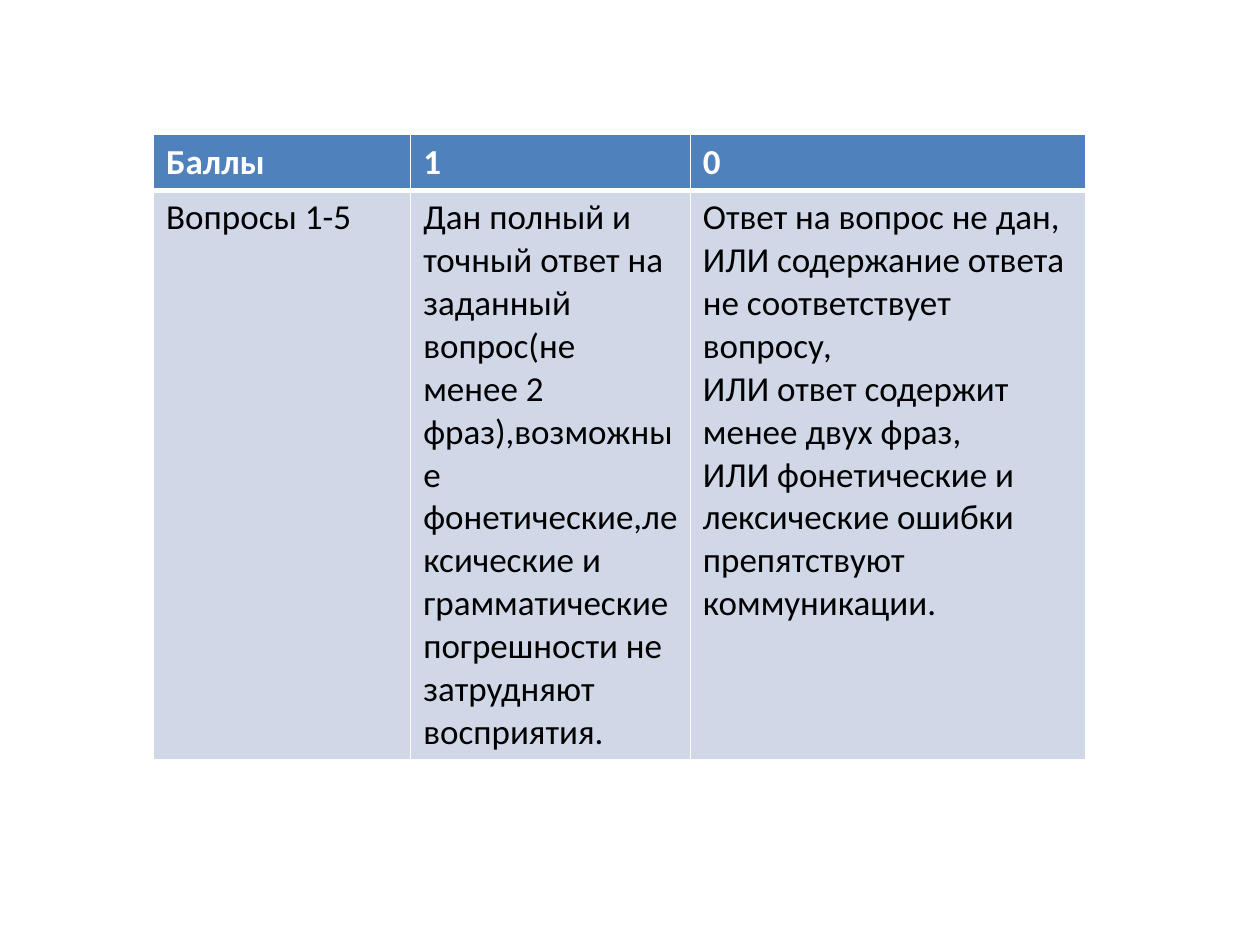
from lxml import etree
from pptx import Presentation
from pptx.dml.color import RGBColor
from pptx.oxml import ns
from pptx.util import Pt

WHITE = RGBColor(0xFF, 0xFF, 0xFF)
BLACK = RGBColor(0, 0, 0)
HEADER_BLUE = RGBColor(0x4F, 0x81, 0xBD)
BODY_BLUE = RGBColor(0xD0, 0xD8, 0xE8)

COLUMN_WIDTHS = (146.9, 159.8, 226.1)
ROW_HEIGHT = 29.5
HEADER = [["Баллы"], ["1"], ["0"]]
CRITERIA = [
    ["Вопросы 1-5"],
    ["Дан полный и точный ответ на заданный вопрос(не менее 2 фраз),возможные "
     "фонетические,лексические и грамматические погрешности не затрудняют восприятия."],
    ["Ответ на вопрос не дан,",
     "ИЛИ содержание ответа не соответствует вопросу,",
     "ИЛИ ответ содержит менее двух фраз,",
     "ИЛИ фонетические и лексические ошибки препятствуют коммуникации."],
]


def set_borders(cell, widths, color):
    """Draw the left, right, top and bottom borders of a cell, in points."""
    properties = cell._tc.get_or_add_tcPr()
    for position, (side, width) in enumerate(zip("LRTB", widths)):
        line = etree.Element(ns.qn(f"a:ln{side}"), w=str(Pt(width)))
        fill = etree.SubElement(line, ns.qn("a:solidFill"))
        etree.SubElement(fill, ns.qn("a:srgbClr"), val=str(color))
        properties.insert(position, line)


def fill_cell(cell, lines, fill, color, bold, borders):
    """Write the paragraphs of a cell and give it its colours and borders."""
    cell.fill.solid()
    cell.fill.fore_color.rgb = fill
    set_borders(cell, borders, WHITE)
    frame = cell.text_frame
    for index, line in enumerate(lines):
        para = frame.add_paragraph() if index else frame.paragraphs[0]
        span = para.add_run()
        span.text = line
        span.font.name = "Calibri"
        span.font.size = Pt(20)
        span.font.bold = bold
        span.font.color.rgb = color


def add_score_table(page, left, top):
    """Place the scoring table with its top left corner at the given point."""
    rows = (
        (HEADER, HEADER_BLUE, WHITE, True, (1, 1, 1, 3)),
        (CRITERIA, BODY_BLUE, BLACK, False, (1, 1, 3, 1)),
    )
    table = page.shapes.add_table(
        len(rows), len(COLUMN_WIDTHS), Pt(left), Pt(top),
        Pt(sum(COLUMN_WIDTHS)), Pt(ROW_HEIGHT * len(rows))).table
    for column, width in zip(table.columns, COLUMN_WIDTHS):
        column.width = Pt(width)
    for row, (contents, *style) in zip(table.rows, rows):
        row.height = Pt(ROW_HEIGHT)
        for cell, lines in zip(row.cells, contents):
            fill_cell(cell, lines, *style)


def main():
    """Build the one-page deck."""
    deck = Presentation()
    deck.slide_width, deck.slide_height = Pt(720), Pt(540)
    page = deck.slides.add_slide(deck.slide_layouts[6])
    add_score_table(page, 87.8, 77)
    deck.save("out.pptx")


if __name__ == "__main__":
    main()
